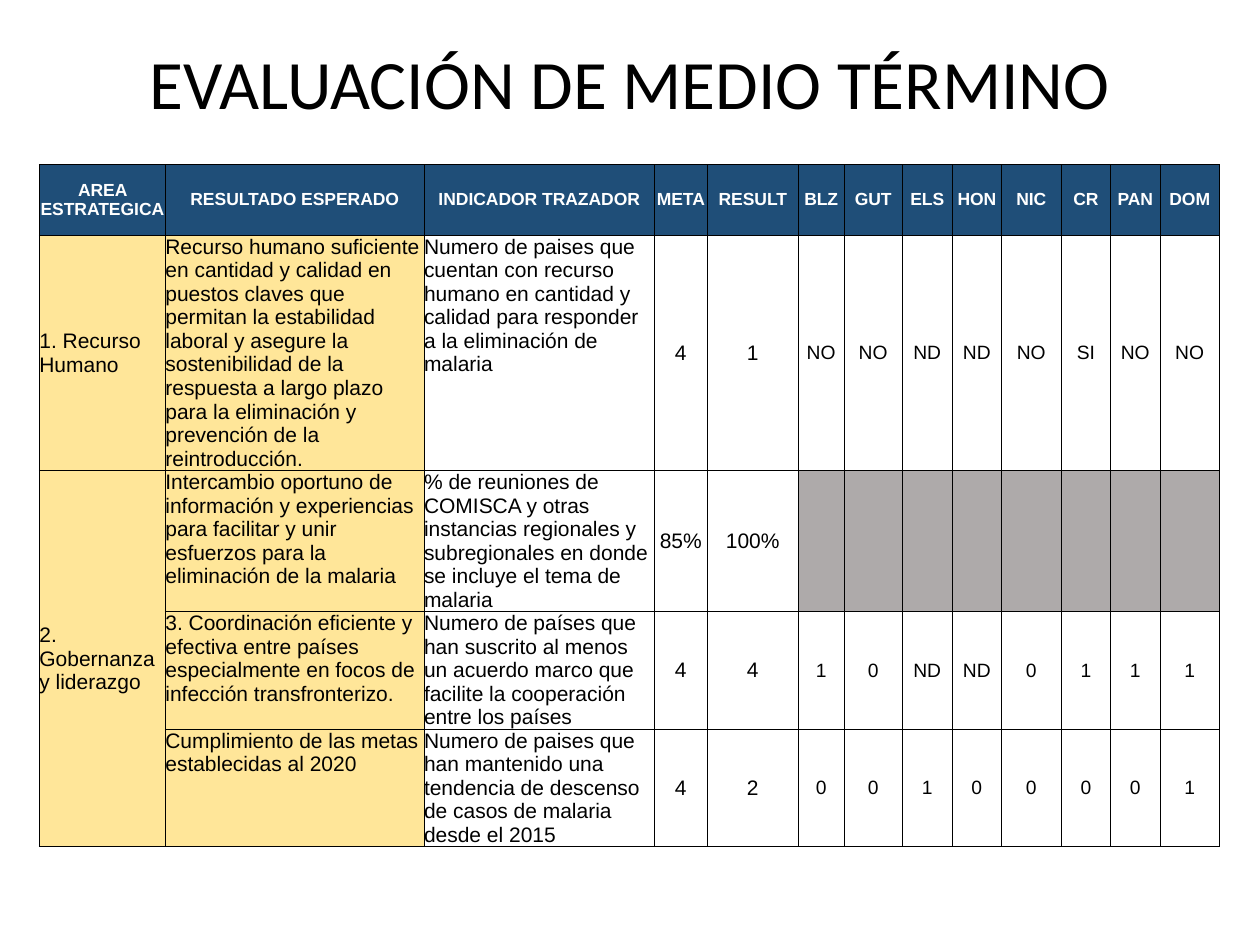
from lxml.etree import SubElement
from pptx import Presentation
from pptx.dml.color import RGBColor
from pptx.enum.text import MSO_ANCHOR, PP_ALIGN
from pptx.oxml.ns import qn
from pptx.util import Pt

NAVY = RGBColor(0x1F, 0x4E, 0x78)
CREAM = RGBColor(0xFF, 0xE6, 0x99)
GRAY = RGBColor(0xAE, 0xAA, 0xAA)
WHITE = RGBColor(0xFF, 0xFF, 0xFF)
BLACK = RGBColor(0, 0, 0)

COLUMN_WIDTHS = [72, 147.8, 131.6, 30.3, 52, 26.2, 33.2, 28.6, 28.2, 34.1, 28.3, 28.2, 34]
ROW_HEIGHTS = [40.5, 134.2, 80.5, 67.2, 67.2]
AREA, EXPECTED, INDICATOR, TARGET, RESULT, FIRST_COUNTRY = range(6)

HEADINGS = ["AREA ESTRATEGICA", "RESULTADO ESPERADO", "INDICADOR TRAZADOR", "META", "RESULT",
            "BLZ", "GUT", "ELS", "HON", "NIC", "CR", "PAN", "DOM"]
EVALUATION = [
    ["1. Recurso Humano",
     "Recurso humano suficiente en cantidad y calidad en puestos claves que permitan la "
     "estabilidad laboral y asegure la sostenibilidad de la respuesta a largo plazo para la "
     "eliminación y prevención de la reintroducción.",
     "Numero de paises que cuentan con recurso humano en cantidad y calidad para responder "
     "a la eliminación de malaria",
     "4", "1", "NO", "NO", "ND", "ND", "NO", "SI", "NO", "NO"],
    ["2. Gobernanza y liderazgo",
     "Intercambio oportuno de información y experiencias para facilitar y unir esfuerzos "
     "para la eliminación de la malaria",
     "% de reuniones de COMISCA y otras instancias regionales y subregionales en donde se "
     "incluye el tema de malaria",
     "85%", "100%"] + [""] * 8,
    ["",
     "3. Coordinación eficiente y efectiva entre países especialmente en focos de infección "
     "transfronterizo.",
     "Numero de países que han suscrito al menos un acuerdo marco que facilite la "
     "cooperación entre los países",
     "4", "4", "1", "0", "ND", "ND", "0", "1", "1", "1"],
    ["",
     "Cumplimiento de las metas establecidas al 2020",
     "Numero de paises que han mantenido una tendencia de descenso de casos de malaria "
     "desde el 2015",
     "4", "2", "0", "0", "1", "0", "0", "0", "0", "1"],
]


def add_run(paragraph, text, font_name, size, color, bold=False):
    run = paragraph.add_run()
    run.text = text
    run.font.name = font_name
    run.font.size = Pt(size)
    run.font.bold = bold
    run.font.color.rgb = color


def add_borders(cell):
    properties = cell._tc.get_or_add_tcPr()
    for side in ("a:lnL", "a:lnR", "a:lnT", "a:lnB"):
        line = SubElement(properties, qn(side), w=str(Pt(0.5)))
        fill = SubElement(line, qn("a:solidFill"))
        SubElement(fill, qn("a:srgbClr"), val=str(BLACK))


def format_cell(cell, text, fill, align, anchor, size, color=BLACK, bold=False):
    add_borders(cell)
    if fill is None:
        cell.fill.background()
    else:
        cell.fill.solid()
        cell.fill.fore_color.rgb = fill
    cell.margin_left = cell.margin_right = cell.margin_top = cell.margin_bottom = 0
    cell.vertical_anchor = anchor
    paragraph = cell.text_frame.paragraphs[0]
    paragraph.alignment = align
    if text:
        add_run(paragraph, text, "Arial", size, color, bold)


def format_result_cell(cell, column, text):
    if column <= INDICATOR:
        fill = WHITE if column == INDICATOR else CREAM
        anchor = MSO_ANCHOR.MIDDLE if column == AREA else MSO_ANCHOR.TOP
        format_cell(cell, text, fill, PP_ALIGN.LEFT, anchor, 12)
    else:
        fill = None if text else GRAY
        size = 11 if column >= FIRST_COUNTRY else 12
        format_cell(cell, text, fill, PP_ALIGN.CENTER, MSO_ANCHOR.MIDDLE, size)


def add_title(slide, text):
    title = slide.shapes.title
    title.left, title.top, title.width, title.height = Pt(36), Pt(21.6), Pt(648), Pt(50)
    title.text_frame.vertical_anchor = MSO_ANCHOR.MIDDLE
    paragraph = title.text_frame.paragraphs[0]
    paragraph.alignment = PP_ALIGN.CENTER
    add_run(paragraph, text, "Calibri", 39.6, BLACK)


def add_evaluation_table(slide):
    table = slide.shapes.add_table(
        len(ROW_HEIGHTS), len(COLUMN_WIDTHS), Pt(22.5), Pt(94),
        Pt(sum(COLUMN_WIDTHS)), Pt(sum(ROW_HEIGHTS))).table
    table.first_row = table.horz_banding = False
    for column, width in zip(table.columns, COLUMN_WIDTHS):
        column.width = Pt(width)
    for row, height in zip(table.rows, ROW_HEIGHTS):
        row.height = Pt(height)

    # Heading row
    for column, heading in enumerate(HEADINGS):
        format_cell(table.cell(0, column), heading, NAVY, PP_ALIGN.CENTER,
                    MSO_ANCHOR.MIDDLE, 10, WHITE, bold=True)

    # Results by strategic area; the second area covers three rows
    for row, results in enumerate(EVALUATION, start=1):
        for column, text in enumerate(results):
            format_result_cell(table.cell(row, column), column, text)
    table.cell(2, AREA).merge(table.cell(4, AREA))


def main():
    presentation = Presentation()
    presentation.slide_width, presentation.slide_height = Pt(720), Pt(540)
    slide = presentation.slides.add_slide(presentation.slide_layouts[5])
    add_title(slide, "EVALUACIÓN DE MEDIO TÉRMINO")
    add_evaluation_table(slide)
    presentation.save("out.pptx")


if __name__ == "__main__":
    main()
